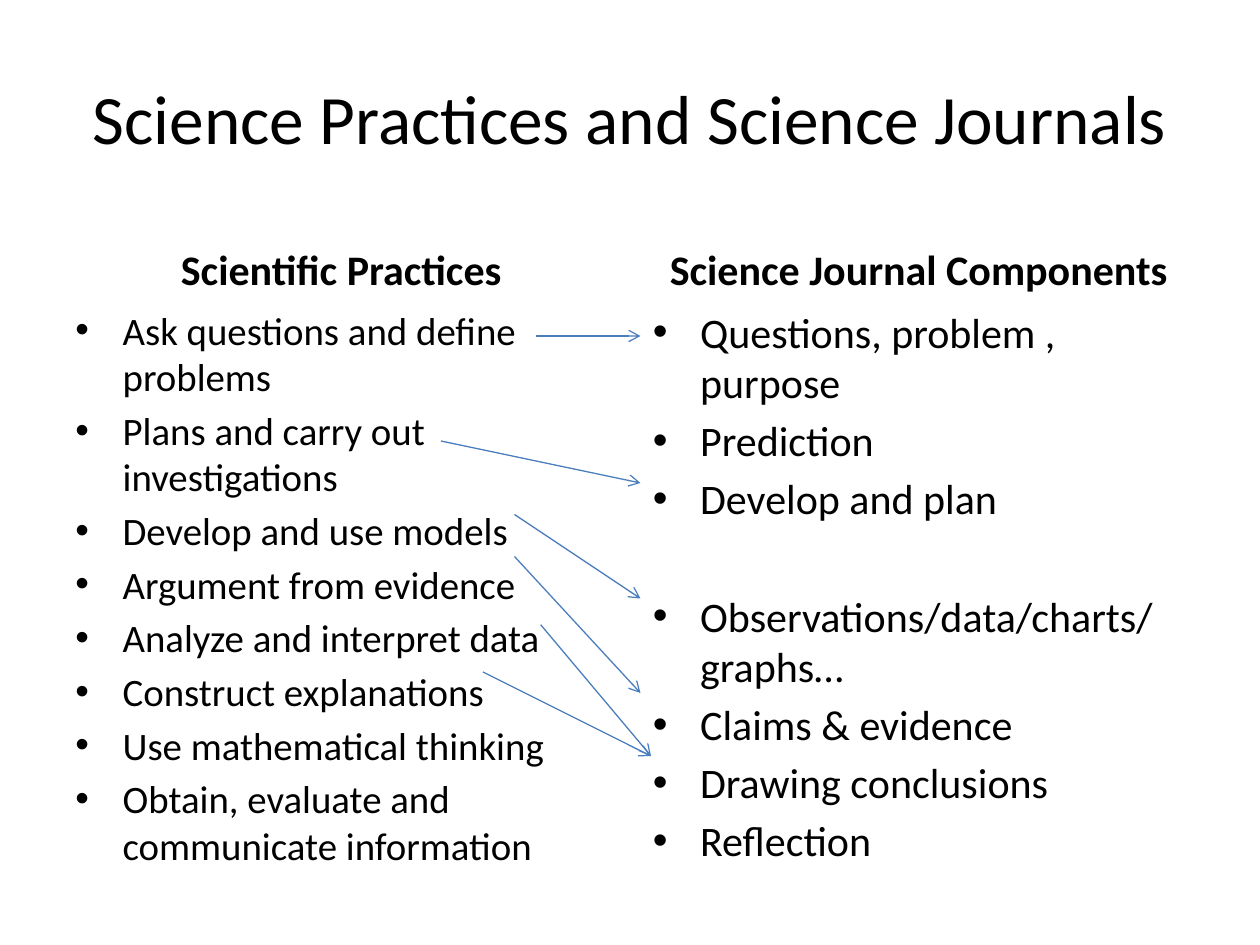
from lxml import etree
from pptx import Presentation
from pptx import util as u
from pptx.dml.color import RGBColor
from pptx.enum import shapes, text
from pptx.oxml.ns import qn

HEX = {"ink": "000000", "arrow": "4B7EBC", "back": "FFFFFF"}
PRACTICES = [
    "Ask questions and define problems",
    "Plans and carry out investigations",
    "Develop and use models",
    "Argument from evidence",
    "Analyze and interpret data",
    "Construct explanations",
    "Use mathematical thinking",
    "Obtain, evaluate and communicate information",
]
PLAN = ["Questions, problem , purpose", "Prediction", "Develop and plan"]
RESULTS = [
    "Observations/data/charts/ graphs…",
    "Claims & evidence",
    "Drawing conclusions",
    "Reflection",
]
ARROWS = [
    (306, 192, 366, 192),
    (252, 252, 366, 276),
    (294, 294, 366, 342),
    (294, 318, 366, 396),
    (309, 357, 372, 432),
    (276, 384, 372, 432),
]
LEFT, RIGHT, WIDTH = 36, 366, 318


class Page:
    """Holds the font and the slide being drawn; lengths are in points."""

    def __init__(self, slide, face="Calibri"):
        self.slide, self.face = slide, face
        fill = slide.background.fill
        fill.solid()
        fill.fore_color.rgb = RGBColor.from_string(HEX["back"])

    def frame(self, x, y, w, h, anchor):
        box = self.slide.shapes.add_textbox(u.Pt(x), u.Pt(y), u.Pt(w), u.Pt(h))
        frame = box.text_frame
        frame.word_wrap = True
        frame.vertical_anchor = anchor
        return frame

    def style(self, para, size, bold=False):
        font = para.font
        font.name, font.size, font.bold = self.face, u.Pt(size), bold
        font.color.rgb = RGBColor.from_string(HEX["ink"])

    def head(self, words, x, y, w, h, size, anchor, bold=False):
        para = self.frame(x, y, w, h, anchor).paragraphs[0]
        para.text = words
        para.alignment = text.PP_ALIGN.CENTER
        self.style(para, size, bold)

    def bullets(self, items, x, y, w, h, size, gap, wide=None):
        """Lists the items; wide maps an item to a larger space above it."""
        frame = self.frame(x, y, w, h, text.MSO_ANCHOR.TOP)
        for i, item in enumerate(items):
            para = frame.add_paragraph() if i else frame.paragraphs[0]
            para.text = item
            para.space_before = u.Pt((wide or {}).get(item, gap))
            self.style(para, size)
            props = para._p.get_or_add_pPr()
            props.set("marL", str(u.Pt(27)))
            props.set("indent", str(u.Pt(-27)))
            mark = etree.Element(qn("a:buFont"), typeface="Arial")
            char = etree.Element(qn("a:buChar"), char="•")
            props.find(qn("a:defRPr")).addprevious(mark)
            mark.addnext(char)

    def arrow(self, *ends):
        line = self.slide.shapes.add_connector(
            shapes.MSO_CONNECTOR.STRAIGHT, *map(u.Pt, ends))
        line.line.width = u.Pt(0.75)
        line.line.color.rgb = RGBColor.from_string(HEX["arrow"])
        etree.SubElement(line.line._get_or_add_ln(), qn("a:tailEnd"), type="arrow")
        etree.SubElement(line._element.spPr, qn("a:effectLst"))


def main():
    deck = Presentation()
    deck.slide_width, deck.slide_height = u.Pt(720), u.Pt(540)
    page = Page(deck.slides.add_slide(deck.slide_layouts[6]))
    page.head("Science Practices and Science Journals",
              LEFT, 21.6, 648, 90, 39.6, text.MSO_ANCHOR.MIDDLE)
    columns = [
        (LEFT, "Scientific Practices", PRACTICES, 22.2, 4, None),
        (RIGHT, "Science Journal Components", PLAN + RESULTS, 24, 4.3,
         {RESULTS[0]: 38.5}),
    ]
    for x, title, items, size, gap, wide in columns:
        page.head(title, x, 121, WIDTH, 50.4, 24, text.MSO_ANCHOR.BOTTOM, True)
        page.bullets(items, x, 171.4, WIDTH, 311, size, gap, wide)
    for ends in ARROWS:
        page.arrow(*ends)
    deck.save("out.pptx")


if __name__ == "__main__":
    main()
